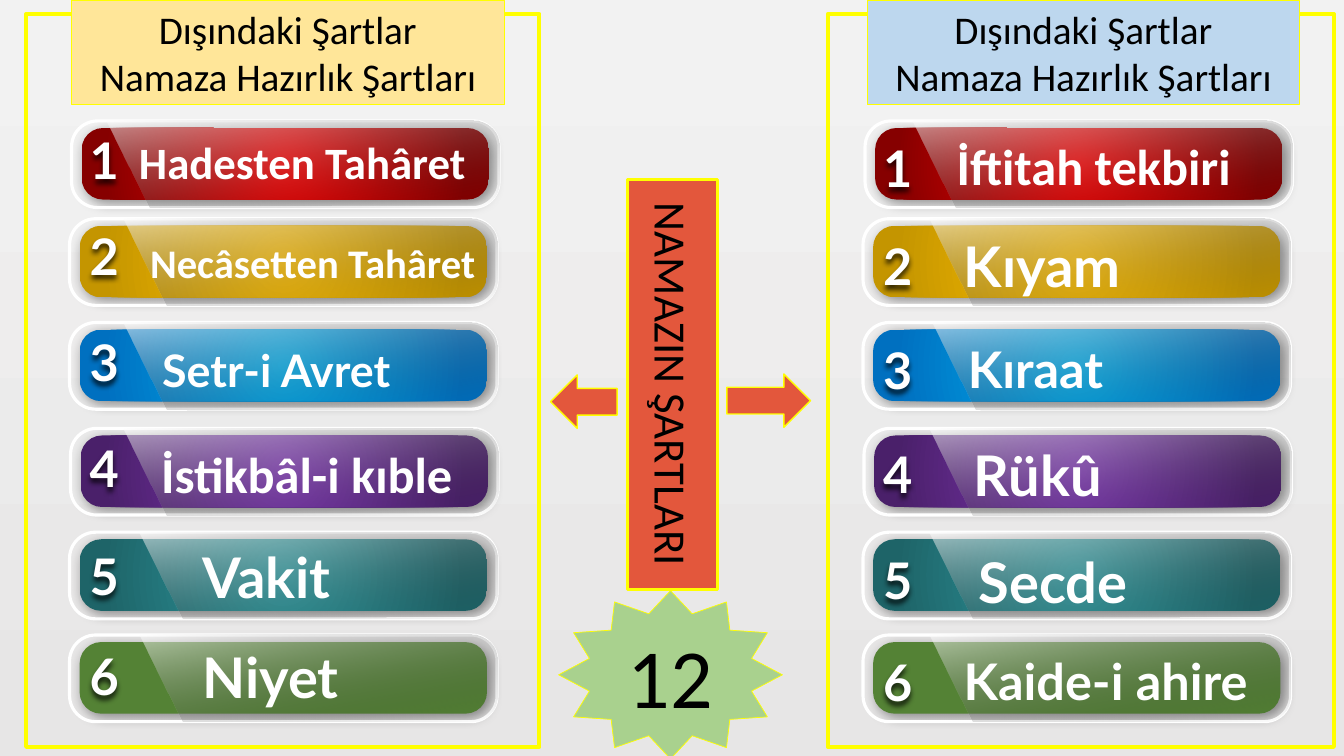
from math import cos, pi, sin

from lxml.etree import SubElement
from pptx import Presentation
from pptx.dml.color import RGBColor
from pptx.enum.shapes import MSO_SHAPE as SHAPE
from pptx.enum.text import MSO_ANCHOR, MSO_AUTO_SIZE, PP_ALIGN
from pptx.oxml.ns import qn
from pptx.util import Inches, Pt

rgb = RGBColor.from_string


def shade(fill, first, last, end=1.0):
    """Give a fill a two-stop gradient whose last stop lies at end."""
    fill.gradient()
    for stop, colour, position in zip(fill.gradient_stops, (first, last), (0, end)):
        stop.color.rgb = rgb(colour)
        stop.position = position


def cast_shadow(shape, blur, distance, angle, opacity):
    shape.shadow.inherit = False
    effects = shape._element.spPr.find(qn("a:effectLst"))
    shadow = SubElement(effects, qn("a:outerShdw"), blurRad=str(Pt(blur)),
                        dist=str(Pt(distance)), dir=str(angle * 60000),
                        algn="tl", rotWithShape="0")
    black = SubElement(shadow, qn("a:srgbClr"), val="000000")
    SubElement(black, qn("a:alpha"), val=str(opacity * 1000))


prs = Presentation()
prs.slide_width, prs.slide_height = Inches(13.33), Inches(7.5)
slide = prs.slides.add_slide(prs.slide_layouts[6])
shapes = slide.shapes
shade(slide.background.fill, "F2F2F2", "E7E6E6")
slide.background.fill.gradient_angle = 270

# Yellow frames, headings, arrows and the centre pieces
HEADING = "Dışındaki Şartlar\nNamaza Hazırlık Şartları"
blocks = [
    # preset, left, top, width, height, rotation, fill, line width, text, size
    (SHAPE.RECTANGLE, 0.26, 0.14, 5.09, 7.27, 0, None, 3, "", 0),
    (SHAPE.RECTANGLE, 8.21, 0.14, 5.02, 7.27, 0, None, 3, "", 0),
    (SHAPE.RECTANGLE, 0.71, 0, 4.29, 1.04, 0, "FFE699", 0.5, HEADING, 28),
    (SHAPE.RECTANGLE, 8.6, 0, 4.29, 1.04, 0, "BDD7EE", 0.5, HEADING, 28),
    (SHAPE.RECTANGLE, 4.64, 3.37, 4.06, 0.89, 90, "E3573C", 2.25, "NAMAZIN ŞARTLARI", 32),
    (SHAPE.RIGHT_ARROW, 7.21, 3.71, 0.83, 0.53, 0, "E3573C", 1, "", 0),
    (SHAPE.RIGHT_ARROW, 5.46, 3.72, 0.66, 0.53, 180, "E3573C", 1, "", 0),
    (SHAPE.STAR_12_POINT, 5.54, 5.86, 2.22, 1.67, 0, "A9D18E", 0.5, "12", 60),
]
for preset, left, top, width, height, rotation, colour, weight, text, size in blocks:
    block = shapes.add_shape(preset, Inches(left), Inches(top), Inches(width), Inches(height))
    block.shadow.inherit = False
    block.rotation = rotation
    if colour:
        block.fill.solid()
        block.fill.fore_color.rgb = rgb(colour)
    else:
        block.fill.background()
    block.line.color.rgb = rgb("FFFF00")
    block.line.width = Pt(weight)
    if text:
        block.text_frame.text = text
        block.text_frame.vertical_anchor = MSO_ANCHOR.MIDDLE
        for paragraph in block.text_frame.paragraphs:
            paragraph.alignment = PP_ALIGN.CENTER
            paragraph.font.size = Pt(size)
            paragraph.font.name = "Calibri"
            paragraph.font.color.rgb = rgb("000000")

# Bar rows shared by both columns: top, shift to the right, centre and edge colours
rows = [
    (1.27, 0.02, "FF0000", "860000"),
    (2.24, 0, "FFC000", "C49500"),
    (3.27, 0, "00B0F0", "0070C0"),
    (4.32, 0.01, "8037B7", "4A206A"),
    (5.35, 0, "2F9DA3", "1E6468"),
    (6.37, 0, "548235", None),
]
# Condition, size, font, label left, top and width, number top, glass left
outer_conditions = [
    ("Hadesten Tahâret", 32, "Calibri", 1.28, 1.29, 3.61, 1.23, 1.06),
    ("Necâsetten Tahâret", 29, "Calibri", 1.39, 2.31, 3.83, 2.18, 1.22),
    ("Setr-i Avret", 32, "Lato", 1.51, 3.35, 2.99, 3.24, 1.22),
    ("İstikbâl-i kıble", 36, "Calibri", 1.5, 4.35, 3.29, 4.29, 1.22),
    ("Vakit", 40, "Lato", 1.91, 5.33, 2.58, 5.36, 1.38),
    ("Niyet", 40, "Lato", 1.91, 6.32, 2.58, 6.35, 1.38),
]
inner_conditions = [
    ("İftitah tekbiri", 36, "Calibri", 9.39, 1.29, 3.08, 1.31, 9.05),
    ("Kıyam", 40, "Lato", 9.46, 2.25, 2.58, 2.28, 9.22),
    ("Kıraat", 36, "Lato", 9.5, 3.31, 2.58, 3.32, 9.25),
    ("Rükû", 40, "Lato", 9.56, 4.32, 2.58, 4.35, 9.22),
    ("Secde", 40, "Lato", 9.61, 5.38, 2.58, 5.4, 9.22),
    ("Kaide-i ahire", 36, "Lato", 9.46, 6.4, 3.26, 6.41, 9.22),
]
RIM_WIDTH, RIM_HEIGHT, RADIUS, SLANT = 4.24, 0.86, 0.26, 0.43
ARC = [step * pi / 16 for step in range(9)]

for column_left, conditions in ((0.79, outer_conditions), (8.66, inner_conditions)):
    for number, (row, condition) in enumerate(zip(rows, conditions), start=1):
        bar_top, shift, centre, edge = row
        text, size, font, label_left, label_top, label_width, number_top, glass_left = condition
        bar_left = column_left + shift
        rim_left, rim_top = bar_left - 0.1, bar_top - 0.07
        rim_right, rim_bottom = rim_left + RIM_WIDTH, rim_top + RIM_HEIGHT

        bar = shapes.add_shape(SHAPE.ROUNDED_RECTANGLE, Inches(bar_left), Inches(bar_top),
                               Inches(4.04), Inches(0.71))
        bar.adjustments[0] = 0.3
        bar.line.fill.background()
        if edge:
            shade(bar.fill, centre, edge, 0.88)
            gradient = bar._element.spPr.find(qn("a:gradFill"))
            gradient.remove(gradient.find(qn("a:lin")))
            circle = SubElement(gradient, qn("a:path"), path="circle")
            SubElement(circle, qn("a:fillToRect"), l="50000", t="50000", r="50000", b="50000")
        else:
            bar.fill.solid()
            bar.fill.fore_color.rgb = rgb(centre)
        cast_shadow(bar, 9, 3, 45, 40)

        rim = shapes.add_shape(SHAPE.ROUNDED_RECTANGLE, Inches(rim_left), Inches(rim_top),
                               Inches(RIM_WIDTH), Inches(RIM_HEIGHT))
        rim.adjustments[0] = 0.3
        rim.shadow.inherit = False
        rim.fill.background()
        rim.line.color.rgb = rgb("FFFFFF")
        rim.line.width = Pt(2.25)

        corner_x = rim_right - RADIUS
        outline = [(corner_x + RADIUS * sin(a), rim_top + RADIUS * (1 - cos(a))) for a in ARC]
        outline += [(corner_x + RADIUS * cos(a), rim_bottom - RADIUS * (1 - sin(a))) for a in ARC]
        outline.append((glass_left + SLANT, rim_bottom))
        pen = shapes.build_freeform(Inches(glass_left), Inches(rim_top))
        pen.add_line_segments([(Inches(x), Inches(y)) for x, y in outline])
        glass = pen.convert_to_shape()
        glass.shadow.inherit = False
        glass.line.fill.background()
        shade(glass.fill, "FFFFFF", "000000")
        glass.fill.gradient_angle = 280
        for colour, alpha in zip(glass._element.spPr.iter(qn("a:srgbClr")), ("56000", "0")):
            SubElement(colour, qn("a:alpha"), val=alpha)

        for words, points, face, left, top, width in (
                (str(number), 36, "Lato", column_left, number_top, 0.79),
                (text, size, font, label_left, label_top, label_width)):
            label = shapes.add_textbox(Inches(left), Inches(top), Inches(width),
                                       Inches(points / 60 + 0.1))
            label.text_frame.word_wrap = True
            label.text_frame.auto_size = MSO_AUTO_SIZE.SHAPE_TO_FIT_TEXT
            paragraph = label.text_frame.paragraphs[0]
            paragraph.text = words
            paragraph.font.size = Pt(points)
            paragraph.font.name = face
            paragraph.font.bold = True
            paragraph.font.color.rgb = rgb("FFFFFF")
            if words == str(number):
                cast_shadow(label, 4, 3, 90, 75)

prs.save("out.pptx")
